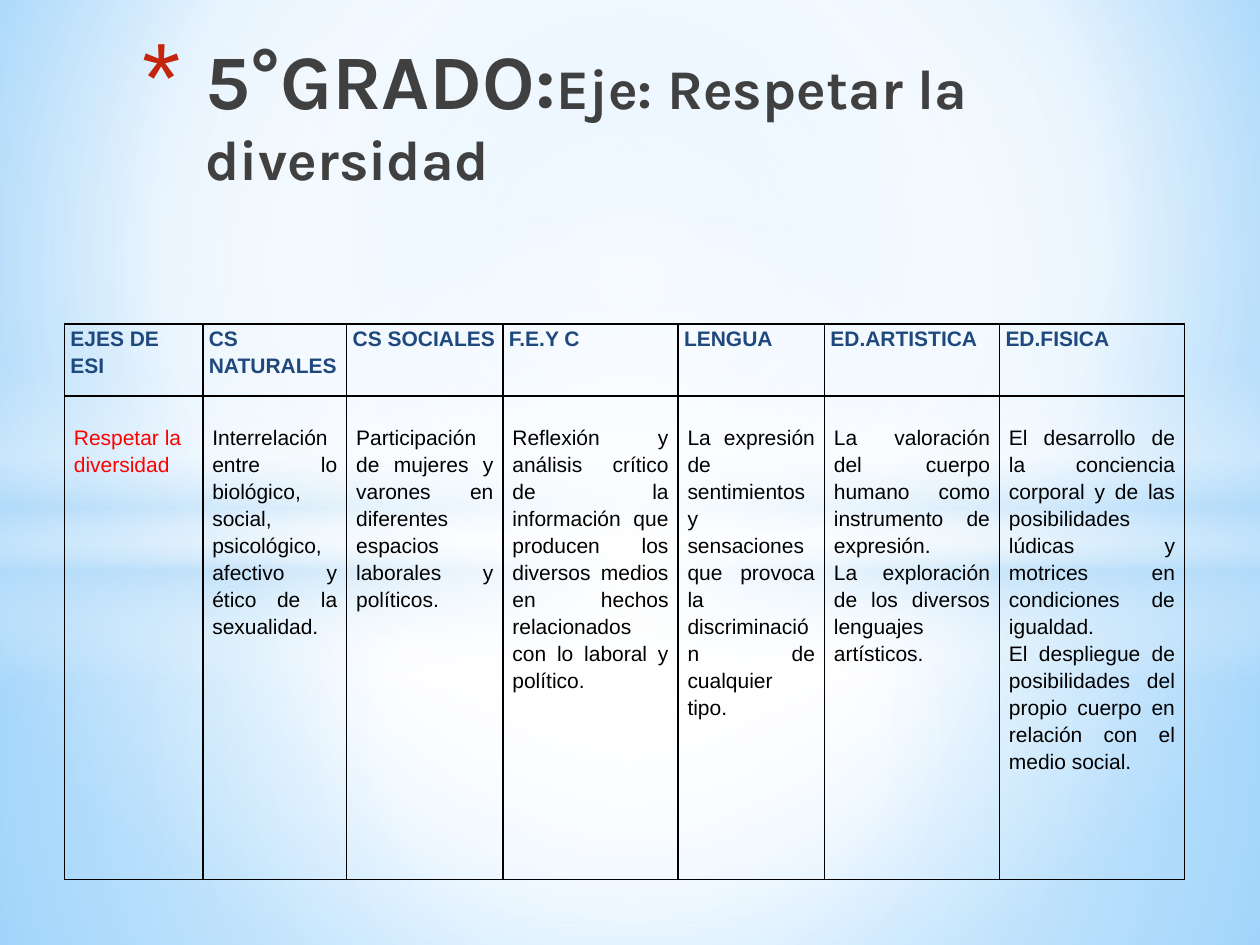
"""Builds the fifth-grade slide on respecting diversity across school subjects."""
from dataclasses import dataclass

from lxml import etree
from pptx import Presentation
from pptx import util as u
from pptx.dml.color import RGBColor
from pptx.enum import shapes, text
from pptx.oxml.ns import nsdecls, qn
from pptx.oxml import parse_xml


@dataclass(frozen=True)
class Theme:
    title_font: str = "Karla"
    body_font: str = "Arial"
    title_size: int = 44
    subtitle_size: int = 32
    table_size: int = 12
    title: str = "404040"
    bullet: str = "C3260C"
    heading: str = "1F497D"
    axis: str = "FF0000"
    ink: str = "000000"
    white: str = "FFFFFF"
    mist: str = "B4DCFA"
    sky: str = "9ED5FF"
    deep_sky: str = "5BB9FF"


THEME = Theme()
CENTER = (50, 50, 50, 50)
GLOWS = [
    (shapes.MSO_SHAPE.RECTANGLE, (0, 10.74, 25.4, 8.31), CENTER,
     [(0, THEME.white, 91), (37, THEME.white, 76), (100, THEME.mist, 79)]),
    (shapes.MSO_SHAPE.RECTANGLE, (0, 0, 25.4, 10.74), CENTER,
     [(0, THEME.white, 89), (48, THEME.white, 62), (100, THEME.mist, 79)]),
    (shapes.MSO_SHAPE.RECTANGLE, (0, 7.37, 25.4, 6.35), None,
     [(0, THEME.white, 0), (29, THEME.white, 30), (45, THEME.mist, 40),
      (55, THEME.white, 26), (65, THEME.mist, 60), (100, THEME.white, 0)]),
    (shapes.MSO_SHAPE.OVAL, (0, 4.45, 25.4, 14.17), CENTER,
     [(0, THEME.white, 100), (54, THEME.white, 0)]),
]
SUBJECTS = [
    ("EJES DE ESI", 2.79, ["Respetar la diversidad"]),
    ("CS NATURALES", 2.9, ["Interrelación entre lo biológico, social, psicológico, "
                           "afectivo y ético de la sexualidad."]),
    ("CS SOCIALES", 3.15, ["Participación de mujeres y varones en diferentes "
                           "espacios laborales y políticos."]),
    ("F.E.Y C", 3.53, ["Reflexión y análisis crítico de la información que producen los "
                       "diversos medios en hechos relacionados con lo laboral y político."]),
    ("LENGUA", 2.95, ["La expresión de sentimientos y sensaciones que provoca la "
                      "discriminación de cualquier tipo."]),
    ("ED.ARTISTICA", 3.53, ["La valoración del cuerpo humano como instrumento de expresión.",
                            "La exploración de los diversos lenguajes artísticos."]),
    ("ED.FISICA", 3.73, ["El desarrollo de la conciencia corporal y de las posibilidades "
                         "lúdicas y motrices en condiciones de igualdad.",
                         "El despliegue de posibilidades del propio cuerpo en relación "
                         "con el medio social."]),
]


def box(*lengths):
    """Turn centimetre numbers into lengths."""
    return [u.Cm(length) for length in lengths]


def paint_gradient(owner, fill, stops, focus):
    """Fill with a circular gradient around focus, or a vertical one without it."""
    fill.gradient()
    blank = owner.find(f".//{qn('a:gradFill')}")
    marks = "".join(
        f'<a:gs pos="{pos * 1000}"><a:srgbClr val="{color}">'
        f'<a:alpha val="{alpha * 1000}"/></a:srgbClr></a:gs>'
        for pos, color, alpha in stops)
    direction = '<a:lin ang="5400000" scaled="0"/>'
    if focus:
        edges = " ".join(f'{side}="{value * 1000}"' for side, value in zip("ltrb", focus))
        direction = f'<a:path path="circle"><a:fillToRect {edges}/></a:path>'
    blank.getparent().replace(blank, parse_xml(
        f'<a:gradFill {nsdecls("a")} rotWithShape="1">'
        f'<a:gsLst>{marks}</a:gsLst>{direction}</a:gradFill>'))


def add_glow(slide, preset, place, focus, stops):
    """Add one translucent layer of the backdrop."""
    glow = slide.shapes.add_shape(preset, *box(*place))
    glow.shadow.inherit = False
    glow.line.fill.background()
    paint_gradient(glow.element, glow.fill, stops, focus)


def style_font(font, name, size, color, bold):
    """Set the face, size, colour and weight of a font."""
    font.name, font.size, font.bold = name, u.Pt(size), bold
    font.color.rgb = RGBColor.from_string(color)


def set_title(slide, grade, axis):
    """Place the bulleted title above the backdrop."""
    title = slide.shapes.title
    slide.shapes.element.append(title.element)
    title.left, title.top, title.width, title.height = box(2.11, 0.53, 19.94, 4.98)
    frame = title.text_frame
    frame.word_wrap = True
    frame.auto_size = text.MSO_AUTO_SIZE.NONE
    frame.vertical_anchor = text.MSO_ANCHOR.TOP
    heading = frame.paragraphs[0]
    heading.alignment = text.PP_ALIGN.LEFT
    style_font(heading.font, THEME.title_font, THEME.title_size, THEME.title, True)
    for words, size in ((grade, THEME.title_size), (axis, THEME.subtitle_size)):
        run = heading.add_run()
        run.text = words
        style_font(run.font, THEME.title_font, size, THEME.title, True)
    layout = heading._p.get_or_add_pPr()
    layout.set("marL", str(u.Cm(1.78)))
    layout.set("indent", str(-u.Cm(1.27)))
    bullet = parse_xml(
        f'<a:pPr {nsdecls("a")}><a:buClr><a:srgbClr val="{THEME.bullet}"/></a:buClr>'
        '<a:buSzPct val="128000"/><a:buFont typeface="Arial"/><a:buChar char="*"/></a:pPr>')
    for position, part in enumerate(list(bullet)):
        layout.insert(position, part)


def outline_cell(cell):
    """Draw a thin line on every side of a cell."""
    properties = cell._tc.get_or_add_tcPr()
    for position, side in enumerate(("lnL", "lnR", "lnT", "lnB")):
        line = etree.Element(qn(f"a:{side}"), w=str(u.Pt(1)))
        fill = etree.SubElement(line, qn("a:solidFill"))
        etree.SubElement(fill, qn("a:srgbClr"), val=THEME.ink)
        properties.insert(position, line)


def fill_cell(cell, lines, color, bold=False, align=text.PP_ALIGN.LEFT, side=0.12, top=0):
    """Write the paragraphs of a cell and give it its margins and borders."""
    cell.fill.background()
    outline_cell(cell)
    cell.margin_left = cell.margin_right = u.Cm(side)
    cell.margin_top, cell.margin_bottom = box(top, 0)
    cell.text_frame.text = "\n".join(lines)
    for paragraph in cell.text_frame.paragraphs:
        paragraph.alignment = align
        paragraph.line_spacing = 1.15
        style_font(paragraph.font, THEME.body_font, THEME.table_size, color, bold)


def add_subject_table(slide):
    """Add the table of contents by subject."""
    subjects = slide.shapes.add_table(2, len(SUBJECTS), *box(1.3, 6.53, 22.58, 11.2)).table
    subjects.first_row = subjects.horz_banding = False
    for row, height in zip(subjects.rows, (1.45, 9.75)):
        row.height = u.Cm(height)
    for index, (subject, width, contents) in enumerate(SUBJECTS):
        subjects.columns[index].width = u.Cm(width)
        fill_cell(subjects.cell(0, index), [subject], THEME.heading, bold=True)
        color, align = ((THEME.ink, text.PP_ALIGN.JUSTIFY) if index
                        else (THEME.axis, text.PP_ALIGN.LEFT))
        fill_cell(subjects.cell(1, index), contents, color, align=align, side=0.19, top=0.54)


def main():
    """Build and save the slide."""
    deck = Presentation()
    deck.slide_width, deck.slide_height = box(25.4, 19.05)
    slide = deck.slides.add_slide(deck.slide_layouts[0])
    subtitle = slide.placeholders[1].element
    subtitle.getparent().remove(subtitle)
    paint_gradient(slide.element, slide.background.fill,
                   [(0, THEME.sky, 100), (60, THEME.white, 100), (100, THEME.deep_sky, 100)],
                   (20, 10, 20, 60))
    for preset, place, focus, stops in GLOWS:
        add_glow(slide, preset, place, focus, stops)
    set_title(slide, "5°GRADO:", "Eje: Respetar la diversidad")
    add_subject_table(slide)
    deck.save("out.pptx")


if __name__ == "__main__":
    main()
